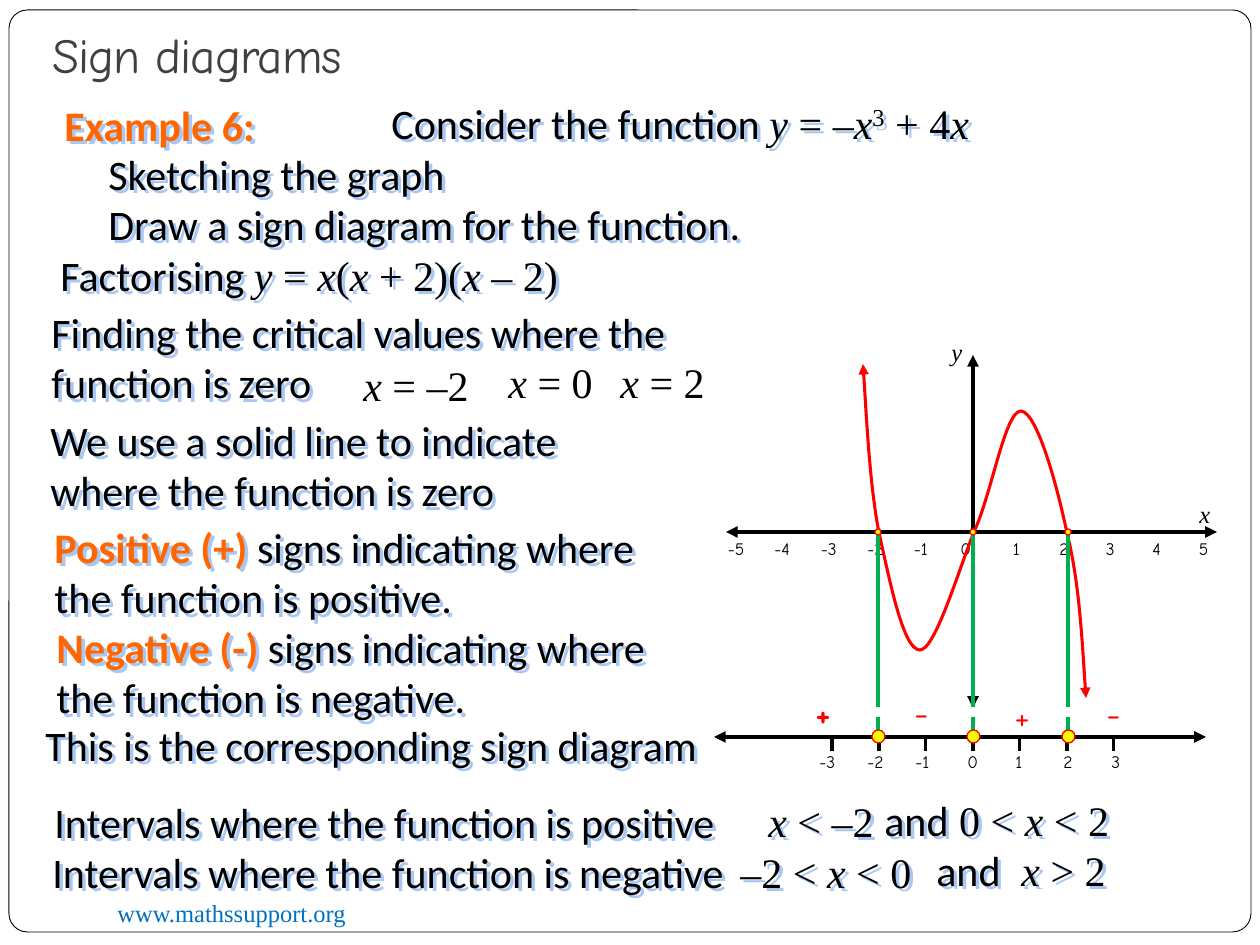
from lxml import etree
from pptx import Presentation
from pptx.dml.color import RGBColor
from pptx.enum.shapes import MSO_CONNECTOR, MSO_SHAPE
from pptx.enum.text import MSO_ANCHOR, MSO_AUTO_SIZE, PP_ALIGN
from pptx.oxml.ns import qn
from pptx.util import Pt

LINE = MSO_CONNECTOR.STRAIGHT
OVAL, RECT, ROUND = MSO_SHAPE.OVAL, MSO_SHAPE.RECTANGLE, MSO_SHAPE.ROUNDED_RECTANGLE
BOTTOM, LEFT = MSO_ANCHOR.BOTTOM, PP_ALIGN.LEFT
GROW, FIXED = MSO_AUTO_SIZE.SHAPE_TO_FIT_TEXT, MSO_AUTO_SIZE.NONE

BLACK = RGBColor(0, 0, 0)
WHITE = RGBColor(255, 255, 255)
GREY = RGBColor(0x40, 0x40, 0x40)
RED = RGBColor(255, 0, 0)
ORANGE = RGBColor(255, 0x66, 0)
YELLOW = RGBColor(255, 255, 0)
GREEN = RGBColor(0, 0xB0, 0x50)
BLUE = RGBColor(0, 0x70, 0xC0)

SANS, HAND, SERIF = "Calibri", "Comic Neue", "Times New Roman"
SCALE = 914400 / 126  # EMU in one px

# Run styles: font, bold, italic, colour
STYLES = {
    "plain": (SANS, False, False, BLACK),
    "key": (SANS, True, False, ORANGE),
    "math": (SERIF, False, False, BLACK),
    "var": (SERIF, False, True, BLACK),
    "power": (SERIF, False, False, BLACK),
    "link": (SERIF, False, False, BLUE),
    "mark": (HAND, False, False, BLACK),
    "sign": (HAND, False, False, RED),
    "bold": (HAND, True, False, RED),
}

# Sentences and formulas: left, top, width, height, shadow, runs
TEXTS = [
    (379, 91, 798, 63, True, [("Consider the function ", "plain"), ("y", "var"), (" = –", "math"),
                              ("x", "var"), ("3", "power"), (" + 4", "math"), ("x", "var")]),
    (52, 93, 252, 63, True, [("Example 6:", "key")]),
    (96, 142, 663, 63, True, [("Sketching the graph", "plain")]),
    (33, 713, 742, 63, True, [("This is the corresponding sign diagram", "plain")]),
    (96, 192, 663, 63, True, [("Draw a sign diagram for the function.", "plain")]),
    (48, 243, 663, 63, True, [("Factorising ", "plain"), ("y", "var"), (" = ", "math"), ("x", "var"),
                              ("(", "math"), ("x", "var"), (" + 2)(", "math"), ("x", "var"),
                              (" – 2)", "math")]),
    (39, 300, 663, 115, True, [("Finding the critical values where the function is zero", "plain")]),
    (351, 353, 163, 63, False, [("x", "var"), (" = –2", "math")]),
    (608, 350, 144, 63, False, [("x", "var"), (" = 2", "math")]),
    (496, 350, 144, 63, False, [("x", "var"), (" = 0", "math")]),
    (38, 408, 547, 115, True, [("We use a solid line to indicate where the function is zero", "plain")]),
    (42, 515, 651, 115, True, [("Positive (+) ", "key"),
                               ("signs indicating where the function is positive.", "plain")]),
    (44, 615, 651, 115, True, [("Negative (-) ", "key"),
                               ("signs indicating where the function is negative.", "plain")]),
    (40, 840, 716, 63, True, [("Intervals where the function is negative", "plain")]),
    (42, 790, 718, 63, True, [("Intervals where the function is positive", "plain")]),
    (756, 789, 136, 63, True, [("x", "var"), (" < –2", "math")]),
    (924, 838, 90, 63, True, [("and", "plain")]),
    (1009, 838, 145, 63, True, [("x", "var"), (" > 2", "math")]),
    (728, 840, 210, 63, True, [("–2 < ", "math"), ("x", "var"), (" < 0", "math")]),
    (872, 788, 286, 63, True, [("and", "plain"), (" 0 < ", "math"), ("x", "var"), (" < 2", "math")]),
]

# Start of the curve, then two control points and an end for each bend
CURVE = [(863, 364),
         (867, 425), (870, 485), (879, 533),
         (890, 581), (903, 650), (920, 650),
         (935, 650), (958, 572), (974, 532),
         (992, 493), (1005, 411), (1021, 411),
         (1037, 412), (1057, 485), (1067, 533),
         (1079, 581), (1082, 639), (1086, 698)]


def px(*vals):
    return [round(v * SCALE) for v in vals]


def add_shade(shape):
    """Soft blue shadow that falls behind the letters."""
    fx = etree.SubElement(shape._element.spPr, qn("a:effectLst"))
    shade = etree.SubElement(fx, qn("a:outerShdw"), dist="35921", dir="2700000", algn="ctr")
    etree.SubElement(shade, qn("a:srgbClr"), val="A9C7F3")


def add_text(slide, box, runs, size, shade=False):
    shape = slide.shapes.add_textbox(*px(*box))
    frame = shape.text_frame
    frame.word_wrap = True
    frame.auto_size = GROW
    for words, style in runs:
        run = frame.paragraphs[0].add_run()
        run.text = words
        font = run.font
        font.size = Pt(size)
        font.name, font.bold, font.italic, font.color.rgb = STYLES[style]
        if style == "power":
            run._r.get_or_add_rPr().set("baseline", "30000")
    if shade:
        add_shade(shape)


def add_heads(shape):
    line = shape.line._get_or_add_ln()
    for end in ("a:headEnd", "a:tailEnd"):
        etree.SubElement(line, qn(end), type="triangle")


def add_line(slide, ends, color, width, heads=False):
    line = slide.shapes.add_connector(LINE, *px(*ends))
    line.line.color.rgb = color
    line.line.width = Pt(width)
    etree.SubElement(line._element.spPr, qn("a:effectLst"))
    if heads:
        add_heads(line)


def add_form(slide, kind, box, fill, edge, width):
    shape = slide.shapes.add_shape(kind, *px(*box))
    shape.shadow.inherit = False
    shape.fill.solid()
    shape.fill.fore_color.rgb = fill
    shape.line.color.rgb = edge
    shape.line.width = Pt(width)
    return shape


def add_curve(slide):
    pen = slide.shapes.build_freeform(*CURVE[0], scale=SCALE)
    pen.add_line_segments(CURVE[1:], close=False)
    shape = pen.convert_to_shape()
    shape.shadow.inherit = False
    shape.fill.background()
    shape.line.color.rgb = RED
    shape.line.width = Pt(1.75)
    add_heads(shape)
    # Turn each three straight segments into one Bézier bend
    steps = shape._element.xpath(".//a:lnTo")
    for i in range(0, len(steps), 3):
        bend = etree.Element(qn("a:cubicBezTo"))
        steps[i].addprevious(bend)
        for step in steps[i:i + 3]:
            bend.append(step[0])
            step.getparent().remove(step)


def add_scale(slide, last, starts, step, top):
    """Number labels from -last to last; starts holds minus, zero and plus."""
    for n in range(-last, last + 1):
        start = starts[(n > 0) - (n < 0) + 1]
        add_text(slide, (start + n * step, top, 50 if n < 0 else 40, 34), [(str(n), "mark")], 10)


def add_title(slide):
    title = slide.shapes.title
    title.left, title.top, title.width, title.height = px(40, 21, 1134, 69)
    frame = title.text_frame
    frame.text = "Sign diagrams"
    frame.vertical_anchor = BOTTOM
    frame.auto_size = FIXED
    par = frame.paragraphs[0]
    par.alignment = LEFT
    par.line_spacing = 0.85
    run = par.runs[0]
    run.font.size, run.font.name = Pt(28), HAND
    run.font.color.rgb = GREY
    run._r.get_or_add_rPr().set("spc", "-50")


def main():
    prs = Presentation()
    prs.slide_width, prs.slide_height = px(1260, 945)
    slide = prs.slides.add_slide(prs.slide_layouts[5])

    # Frame behind the title, and site address
    card = add_form(slide, ROUND, (9, 10, 1242, 922), WHITE, BLACK, 0.5)
    card.adjustments[0] = 0.02
    slide.shapes._spTree.insert(2, card._element)
    add_title(slide)
    add_text(slide, (105, 892, 410, 43), [("www.mathssupport.org", "link")], 14)

    # Sign diagram
    add_line(slide, (714, 737, 1206, 737), BLACK, 2.25, True)
    add_scale(slide, 3, (951, 955, 955), 48, 745)
    for n in range(-3, 4):
        x = 973 + 47 * n
        add_line(slide, (x, 738, x, 751), BLACK, 1.75)

    # Graph
    add_line(slide, (973, 355, 973, 708), BLACK, 2.25, True)
    add_line(slide, (726, 532, 1217, 532), BLACK, 2.25, True)
    add_scale(slide, 5, (948, 948, 954), 46.5, 532)
    add_curve(slide)
    add_text(slide, (939, 331, 40, 43), [("y", "var")], 14)
    add_text(slide, (1187, 493, 40, 43), [("x", "var")], 14)

    # Zeros carried down to the sign diagram, each line broken by a gap
    for x, gap in ((878, 845), (973, 958), (1068, 1040)):
        add_line(slide, (x, 530, x, 735), GREEN, 1.75)
        add_form(slide, OVAL, (x - 6, 730, 13, 13), YELLOW, RED, 0.75)
        add_form(slide, OVAL, (x - 3, 529, 6, 6), YELLOW, RED, 0.75)
        add_form(slide, RECT, (gap, 708, 38, 8), WHITE, WHITE, 1)

    # Signs
    for x, y, sign, style in ((803, 685, "+", "bold"), (902, 684, "-", "sign"),
                              (1002, 688, "+", "sign"), (1094, 685, "-", "sign")):
        add_text(slide, (x, y, 40, 55), [(sign, style)], 20)

    # Sentences and formulas
    for *box, shade, runs in TEXTS:
        add_text(slide, box, runs, 24, shade)

    prs.save("out.pptx")


if __name__ == "__main__":
    main()
